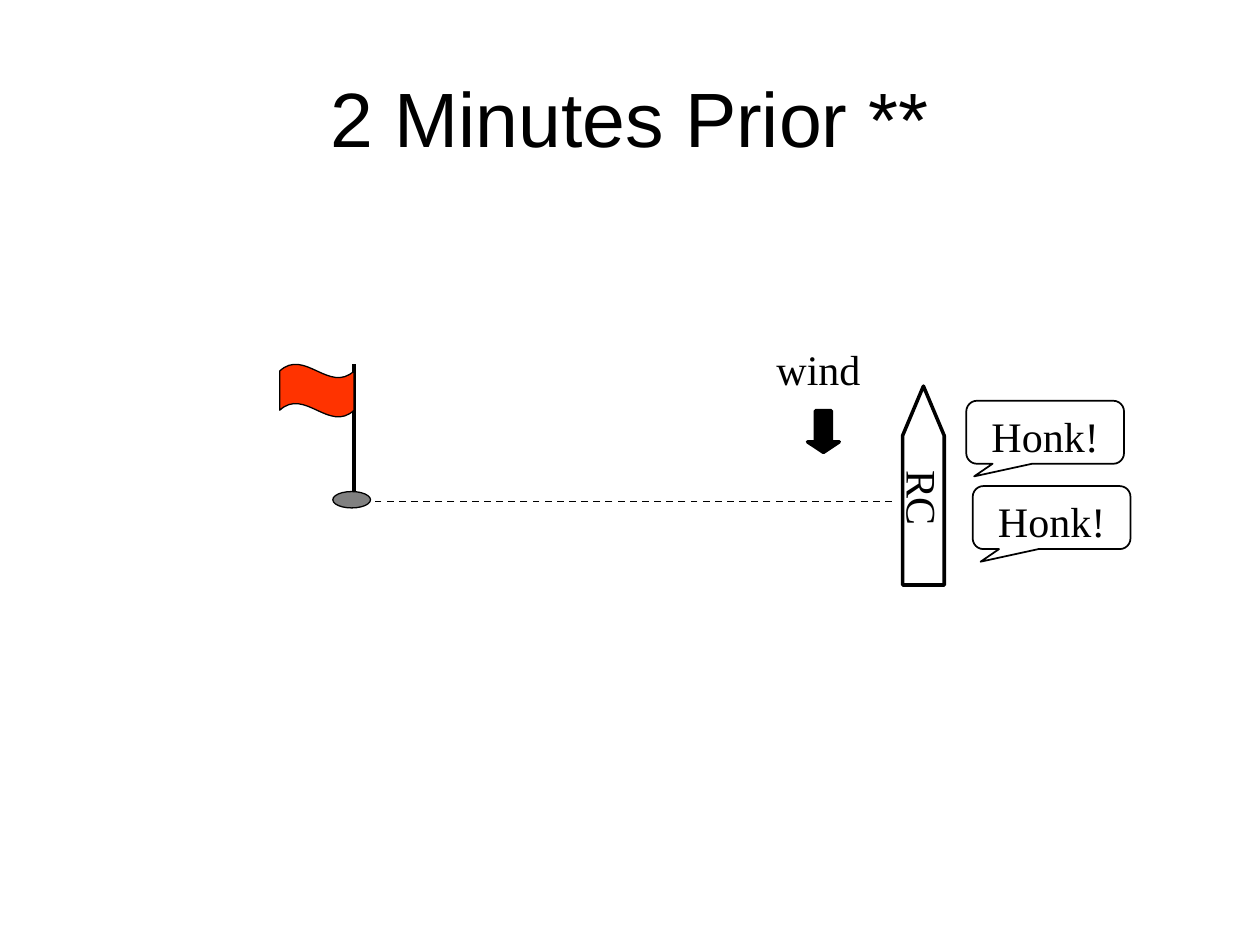
from lxml import etree
from pptx import Presentation
from pptx.dml.color import RGBColor
from pptx.enum.dml import MSO_LINE
from pptx.enum.shapes import MSO_CONNECTOR, MSO_SHAPE
from pptx.enum.text import MSO_ANCHOR, PP_ALIGN
from pptx.oxml.ns import qn
from pptx.util import Cm, Pt

STRAIGHT = MSO_CONNECTOR.STRAIGHT
DASH = MSO_LINE.DASH
PENTAGON = MSO_SHAPE.PENTAGON
OVAL = MSO_SHAPE.OVAL
WAVE = MSO_SHAPE.WAVE
DOWN_ARROW = MSO_SHAPE.DOWN_ARROW
CALLOUT = MSO_SHAPE.ROUNDED_RECTANGULAR_CALLOUT
TOP, MIDDLE = MSO_ANCHOR.TOP, MSO_ANCHOR.MIDDLE
CENTER = PP_ALIGN.CENTER

BLACK, GRAY, RED = "000000", "808080", "FF3300"
SERIF, SANS = "Times New Roman", "Arial"


def color(value):
    return RGBColor.from_string(value)


def set_text(s, text, size=24, font=SERIF, anchor=TOP, wrap=True):
    tf = s.text_frame
    tf.text = text
    tf.word_wrap = wrap
    tf.vertical_anchor = anchor
    p = tf.paragraphs[0]
    p.alignment = CENTER
    r = p.runs[0]
    r.font.size = Pt(size)
    r.font.name = font
    r.font.color.rgb = color(BLACK)


def add_text(shapes, x, y, w, h, text, **style):
    s = shapes.add_textbox(Cm(x), Cm(y), Cm(w), Cm(h))
    set_text(s, text, **style)


def add_shape(shapes, kind, x, y, w, h, width, fill=None, adj=()):
    s = shapes.add_shape(kind, Cm(x), Cm(y), Cm(w), Cm(h))
    s.shadow.inherit = False
    if fill:
        s.fill.solid()
        s.fill.fore_color.rgb = color(fill)
    else:
        s.fill.background()
    s.line.color.rgb = color(BLACK)
    s.line.width = Pt(width)
    for i, value in enumerate(adj):
        s.adjustments[i] = value
    return s


def add_line(shapes, x1, y1, x2, y2, width):
    s = shapes.add_connector(STRAIGHT, Cm(x1), Cm(y1), Cm(x2), Cm(y2))
    s.line.color.rgb = color(BLACK)
    s.line.width = Pt(width)
    etree.SubElement(s.element.spPr, qn("a:effectLst"))
    return s


def add_boat(shapes, x, y, w, h):
    # The hull lies flat in its box and is turned bow up
    s = add_shape(shapes, PENTAGON, x, y, w, h, 2, adj=[1.19])
    s.rotation = 270
    s.element.spPr.find(qn("a:xfrm")).set("flipV", "1")
    set_text(s, "RC", anchor=MIDDLE, wrap=False)


def add_flag(shapes, x, y, w, h):
    base_w, base_h = 0.76, 0.33
    cloth_w, cloth_h = 1.5, 1.07
    pole_x, base_y = x + cloth_w, y + h - base_h
    group = shapes.add_group_shape().shapes
    add_line(group, pole_x, y, pole_x, base_y, 2.25)
    add_shape(group, OVAL, x + w - base_w, base_y, base_w, base_h, 0.75, GRAY)
    add_shape(group, WAVE, x, y, cloth_w, cloth_h, 0.75, RED, [0.13, 0])


def add_wind(shapes, x, y, w, h):
    arrow_w, arrow_h = 0.64, 0.84
    group = shapes.add_group_shape().shapes
    add_shape(group, DOWN_ARROW, x + 1.47, y + h - arrow_h, arrow_w, arrow_h,
              2, BLACK, [0.5, 0.33])
    add_text(group, x, y, w, 1.27, "wind")


def add_honk(shapes, x, y, w, h):
    s = add_shape(shapes, CALLOUT, x, y, w, h, 1, adj=[-0.45, 0.7, 0.17])
    set_text(s, "Honk!")


def main():
    prs = Presentation()
    prs.slide_width, prs.slide_height = Cm(25.4), Cm(19.05)
    shapes = prs.slides.add_slide(prs.slide_layouts[6]).shapes

    # Title
    add_text(shapes, 1.27, 0.76, 22.86, 3.18, "2 Minutes Prior **",
             size=44, font=SANS, anchor=MIDDLE)

    # Start line between committee boat and flag
    start_line = add_line(shapes, 17.98, 10.11, 7.19, 10.11, 1)
    start_line.line.dash_style = DASH
    add_boat(shapes, 16.61, 9.37, 4.01, 0.84)
    add_flag(shapes, 5.64, 7.34, 1.83, 2.9)

    # Wind direction
    add_wind(shapes, 14.81, 6.81, 3.38, 2.31)

    # Two horn signals
    for i in range(2):
        add_honk(shapes, 19.48 + 0.13 * i, 8.08 + 1.72 * i, 3.18, 1.27)

    prs.save("out.pptx")


if __name__ == "__main__":
    main()
